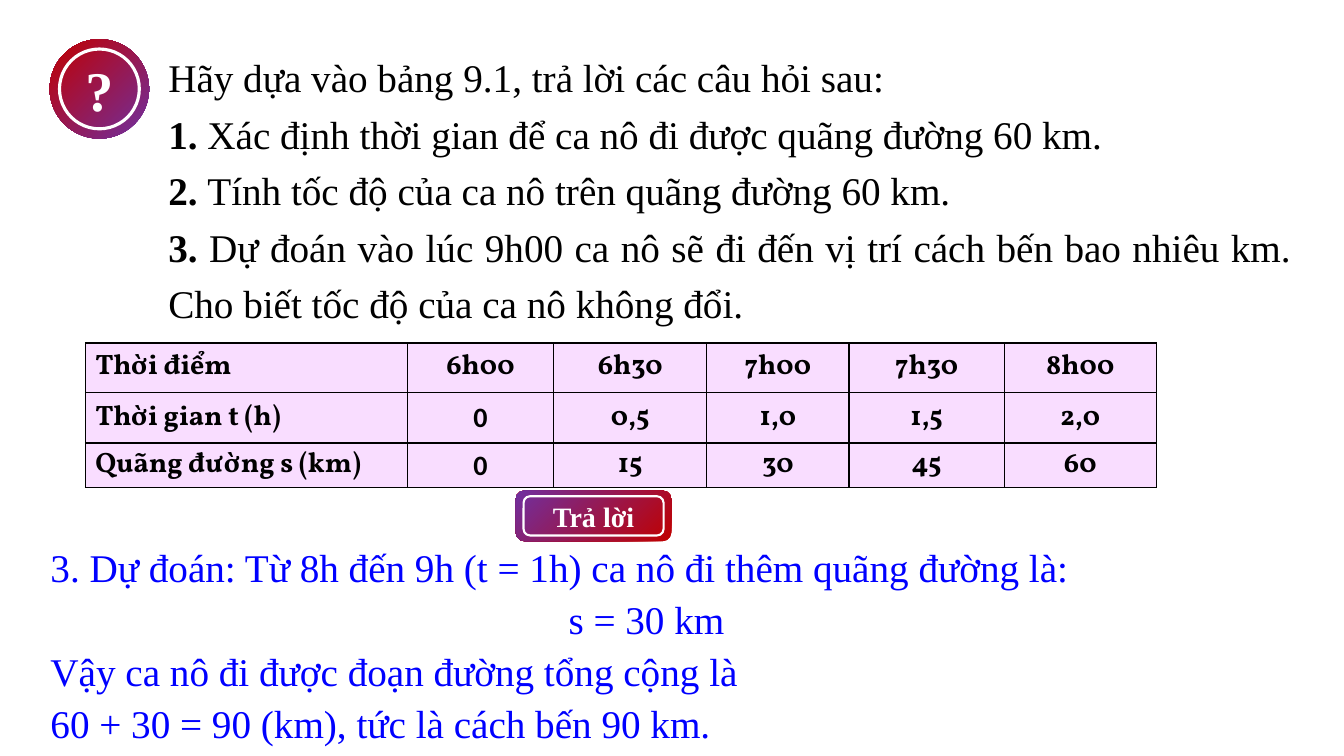
from pptx import Presentation
from pptx.util import Pt
from pptx.dml.color import RGBColor
from pptx.enum.shapes import MSO_SHAPE as Form
from pptx.enum.text import PP_ALIGN as Align, MSO_ANCHOR as Anchor, MSO_AUTO_SIZE as Fit
from pptx.oxml import parse_xml
from pptx.oxml.ns import nsdecls

SERIF = {"name": "Times New Roman", "size": Pt(28), "bold": False}
LABEL = {"name": "Times New Roman", "bold": True}
CELL = {"name": "Vollkorn", "size": Pt(20), "bold": True}

ASKS = [
    ("", "Hãy dựa vào bảng 9.1, trả lời các câu hỏi sau:"),
    ("1. ", "Xác định thời gian để ca nô đi được quãng đường 60 km."),
    ("2. ", "Tính tốc độ của ca nô trên quãng đường 60 km."),
    ("3. ", "Dự đoán vào lúc 9h00 ca nô sẽ đi đến vị trí cách bến bao nhiêu km. "
            "Cho biết tốc độ của ca nô không đổi."),
]
REPLY = [
    ("3. Dự đoán: Từ 8h đến 9h (t = 1h) ca nô đi thêm quãng đường là:", Align.JUSTIFY),
    ("s = 30 km ", Align.CENTER),
    ("Vậy ca nô đi được đoạn đường tổng cộng là", Align.JUSTIFY),
    ("60 + 30 = 90 (km), tức là cách bến 90 km.", Align.JUSTIFY),
]
ROWS = [
    ["Thời điểm", "6h00", "6h30", "7h00", "7h30", "8h00"],
    ["Thời gian t (h)", "0", "0,5", "1,0", "1,5", "2,0"],
    ["Quãng đường s (km)", "0", "15", "30", "45", "60"],
]
WIDTHS = [230, 104.5, 109.5, 101.5, 111, 108.5]
HEIGHTS = [35.5, 36, 32]


def color(code):
    return RGBColor.from_string(code)


def style(font, form, code):
    for key, value in form.items():
        setattr(font, key, value)
    font.color.rgb = color(code)


def place(shape, box):
    for key, value in zip(("left", "top", "width", "height"), box):
        setattr(shape, key, Pt(value))


# Gradient badge with a white ring set inside its edge
def badge(slide, box, kind, text, size, ends, gap, line):
    left, top, width, height = box
    dx, dy = gap
    group = slide.shapes.add_group_shape()
    base = group.shapes.add_shape(kind, *map(Pt, box))
    ring = group.shapes.add_shape(
        kind, *map(Pt, (left + dx, top + dy, width - 2 * dx, height - 2 * dy)))
    for shape in (base, ring):
        shape.shadow.inherit = False
    base.line.fill.background()
    base.fill.gradient()
    base.fill.gradient_angle = 135
    for stop, code in zip(base.fill.gradient_stops, ends):
        stop.color.rgb = color(code)
    ring.fill.background()
    ring.line.color.rgb = color("FFFFFF")
    ring.line.width = Pt(line)
    frame = base.text_frame
    frame.vertical_anchor = Anchor.MIDDLE
    frame.word_wrap = False
    para = frame.paragraphs[0]
    para.text, para.alignment = text, Align.CENTER
    style(para.runs[0].font, LABEL | {"size": Pt(size)}, "FFFFFF")


# Question list in the body placeholder
def asks(slide, box):
    body = slide.placeholders[1]
    place(body, box)
    frame = body.text_frame
    frame.auto_size = Fit.NONE
    for i, (mark, text) in enumerate(ASKS):
        para = frame.paragraphs[0] if i == 0 else frame.add_paragraph()
        props = para._p.get_or_add_pPr()
        props.set("marL", "0")
        props.set("indent", "0")
        props.append(parse_xml(f"<a:buNone {nsdecls('a')}/>"))
        para.alignment, para.line_spacing = Align.JUSTIFY, 1.2
        para.space_before = Pt(0)
        for part, bold in ((mark, True), (text, False)):
            if part:
                run = para.add_run()
                run.text = part
                style(run.font, SERIF | {"bold": bold}, "000000")


# Worked answer
def reply(slide, box):
    frame = slide.shapes.add_textbox(*map(Pt, box)).text_frame
    frame.word_wrap = True
    for i, (text, align) in enumerate(REPLY):
        para = frame.paragraphs[0] if i == 0 else frame.add_paragraph()
        para.text, para.alignment, para.line_spacing = text, align, 1.1
        style(para.runs[0].font, SERIF, "0000FF")


def edges(cell):
    props = cell._tc.get_or_add_tcPr()
    for i, side in enumerate("LRTB"):
        props.insert(i, parse_xml(
            f'<a:ln{side} {nsdecls("a")} w="12700"><a:solidFill>'
            f'<a:srgbClr val="000000"/></a:solidFill></a:ln{side}>'))


# Time and distance table
def times(slide, left, top):
    box = (left, top, sum(WIDTHS), sum(HEIGHTS))
    table = slide.shapes.add_table(len(ROWS), len(WIDTHS), *map(Pt, box)).table
    for col, width in zip(table.columns, WIDTHS):
        col.width = Pt(width)
    for row, height, texts in zip(table.rows, HEIGHTS, ROWS):
        row.height = Pt(height)
        for i, (cell, text) in enumerate(zip(row.cells, texts)):
            cell.fill.solid()
            cell.fill.fore_color.rgb = color("F9DDFF")
            cell.vertical_anchor = Anchor.MIDDLE
            cell.margin_top = cell.margin_bottom = 0
            edges(cell)
            para = cell.text_frame.paragraphs[0]
            para.text = text
            para.alignment = Align.CENTER if i else Align.LEFT
            name = "Calibri" if text == "0" else "Vollkorn"
            style(para.runs[0].font, CELL | {"name": name}, "000000")


def main():
    deck = Presentation()
    deck.slide_width, deck.slide_height = Pt(960), Pt(540)
    slide = deck.slides.add_slide(deck.slide_layouts[1])
    title = slide.shapes.title._element
    title.getparent().remove(title)

    badge(slide, (35.5, 28, 71, 71), Form.OVAL, "?", 40,
          ("7030A0", "C00000"), (7, 7), 2.25)
    asks(slide, (113, 28, 816.5, 207.5))
    reply(slide, (29, 381.5, 872.5, 156))
    badge(slide, (368.5, 350.5, 111, 36), Form.ROUNDED_RECTANGLE, "Trả lời", 20,
          ("C00000", "7030A0"), (5.5, 4), 1.5)
    times(slide, 61, 245)
    deck.save("out.pptx")


if __name__ == "__main__":
    main()
